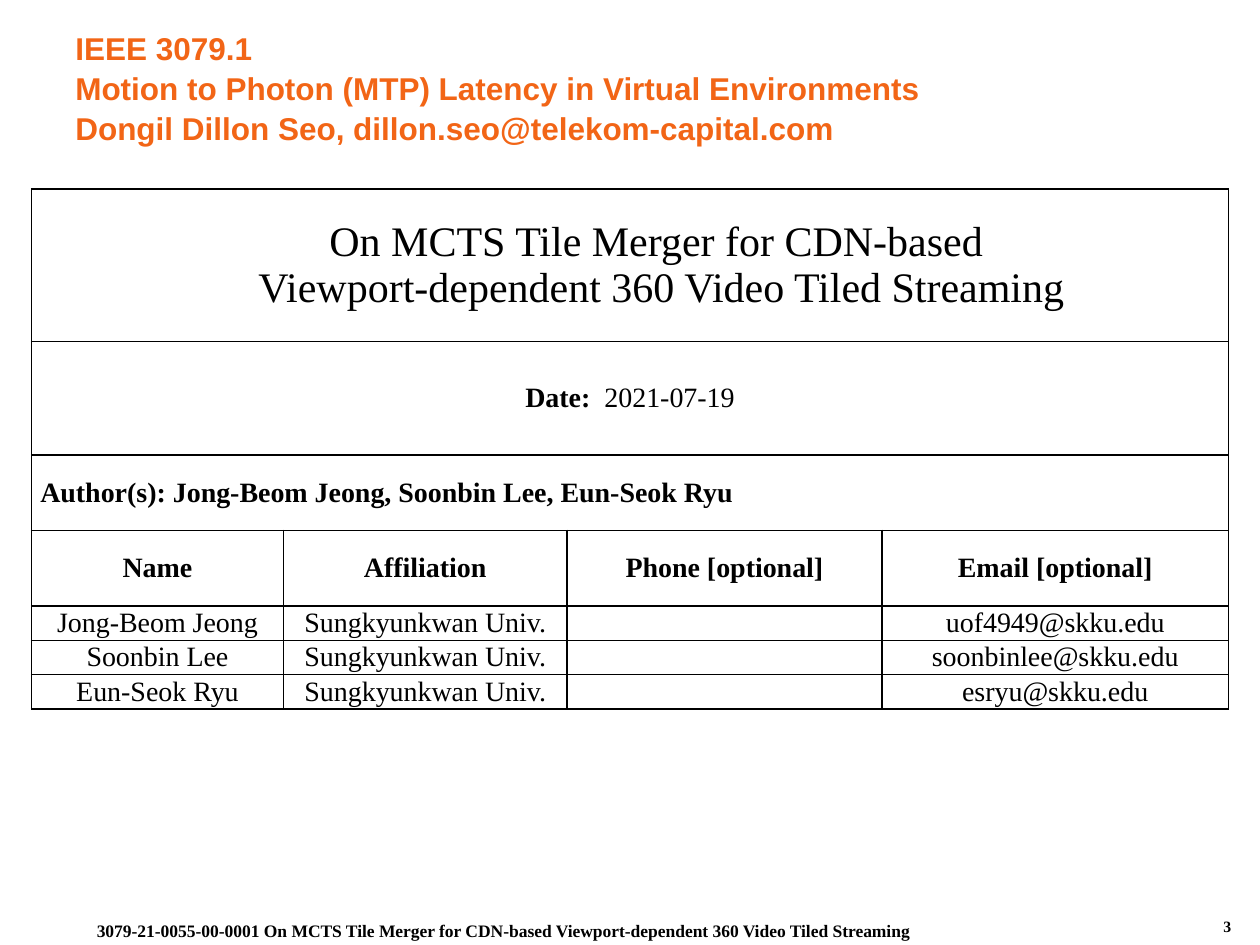
from dataclasses import dataclass

from lxml.etree import SubElement
from pptx import Presentation
from pptx.dml.color import RGBColor
from pptx.enum.text import MSO_ANCHOR, PP_ALIGN
from pptx.oxml import parse_xml
from pptx.oxml.ns import nsdecls, qn
from pptx.util import Inches, Pt


@dataclass(frozen=True)
class Theme:
    heading_font: str = "Arial"
    body_font: str = "Times New Roman"
    accent: str = "F26516"
    ink: str = "000000"
    heading: int = 18
    paper: int = 24
    body: int = 16
    footer: int = 10
    number: int = 9


class Deck:
    def __init__(self, theme):
        self.theme = theme
        self.prs = Presentation()
        self.prs.slide_width, self.prs.slide_height = Inches(10), Inches(7.5)
        self.s = self.prs.slides.add_slide(self.prs.slide_layouts[6])

    def add_text(self, p, text, size, bold=False, color=None, font=None):
        """Add text to a paragraph, turning each newline into a line break."""
        for i, line in enumerate(text.split("\n")):
            if i:
                p.add_line_break()
            r = p.add_run()
            r.text = line
            r.font.size, r.font.bold = Pt(size), bold
            r.font.name = font or self.theme.body_font
            r.font.color.rgb = RGBColor.from_string(color or self.theme.ink)

    def text_box(self, box, text, size, align=PP_ALIGN.LEFT, spacing=None, **style):
        tf = self.s.shapes.add_textbox(*map(Inches, box)).text_frame
        tf.word_wrap = True
        p = tf.paragraphs[0]
        p.alignment, p.line_spacing = align, spacing
        self.add_text(p, text, size, bold=True, **style)

    def table(self, left, top, widths, heights):
        frame = self.s.shapes.add_table(
            len(heights), len(widths), Inches(left), Inches(top),
            Inches(sum(widths)), Inches(sum(heights)))
        table = frame.table
        table.first_row = table.horz_banding = False
        for column, width in zip(table.columns, widths):
            column.width = Inches(width)
        for row, height in zip(table.rows, heights):
            row.height = Inches(height)
        for cell in table.iter_cells():
            self.frame_cell(cell)
        return table

    def frame_cell(self, cell):
        cell.fill.background()
        cell.vertical_anchor = MSO_ANCHOR.MIDDLE
        cell.margin_left = cell.margin_right = Inches(0.07)
        cell.margin_top = cell.margin_bottom = 0
        tcPr = cell._tc.get_or_add_tcPr()
        for i, side in enumerate(("lnL", "lnR", "lnT", "lnB")):
            tcPr.insert(i, parse_xml(
                f'<a:{side} {nsdecls("a")} w="{Pt(1)}"><a:solidFill>'
                f'<a:srgbClr val="{self.theme.ink}"/></a:solidFill></a:{side}>'))

    def cell(self, cell, *parts, size, align=PP_ALIGN.CENTER, after=0, indent=0):
        """Fill a cell with (text, bold) parts; an empty cell keeps its text size."""
        p = cell.text_frame.paragraphs[0]
        p.alignment, p.space_after = align, Pt(after)
        if indent:
            p._p.get_or_add_pPr().set("marL", str(Inches(indent)))
        for text, bold in parts:
            if text:
                self.add_text(p, text, size, bold)
            else:
                SubElement(p._p, qn("a:endParaRPr"), sz=str(size * 100))


def main():
    theme = Theme()
    deck = Deck(theme)

    table = deck.table(0.25, 1.5, [2, 2.25, 2.5, 2.75],
                       [1.21, 0.9, 0.6, 0.6] + [0.13] * 3)
    for row in range(3):
        table.cell(row, 0).merge(table.cell(row, 3))
    deck.cell(table.cell(0, 0),
              ("On MCTS Tile Merger for CDN-based \n"
               "Viewport-dependent 360 Video Tiled Streaming", False),
              size=theme.paper, after=12, indent=0.5)
    deck.cell(table.cell(1, 0), ("Date:", True), ("  2021-07-19", False),
              size=theme.body, after=12)
    deck.cell(table.cell(2, 0),
              ("Author(s): Jong-Beom Jeong, Soonbin Lee, Eun-Seok Ryu", True),
              size=theme.body, align=PP_ALIGN.LEFT)

    school = "Sungkyunkwan Univ."
    people = [
        ("Name", "Affiliation", "Phone [optional]", "Email [optional]"),
        ("Jong-Beom Jeong", school, "", "uof4949@skku.edu"),
        ("Soonbin Lee", school, "", "soonbinlee@skku.edu"),
        ("Eun-Seok Ryu", school, "", "esryu@skku.edu"),
    ]
    for i, person in enumerate(people):
        for j, value in enumerate(person):
            deck.cell(table.cell(3 + i, j), (value, i == 0), size=theme.body)

    deck.text_box((8.25, 7.23, 1.62, 0.27), "3", theme.number, align=PP_ALIGN.RIGHT)
    deck.text_box((0.5, 0.17, 9, 1),
                  "IEEE 3079.1\n"
                  "Motion to Photon (MTP) Latency in Virtual Environments\n"
                  "Dongil Dillon Seo, dillon.seo@telekom-capital.com",
                  theme.heading, spacing=1.05,
                  color=theme.accent, font=theme.heading_font)
    deck.text_box((0.67, 7.25, 7.96, 0.25),
                  "3079-21-0055-00-0001 On MCTS Tile Merger for CDN-based "
                  "Viewport-dependent 360 Video Tiled Streaming", theme.footer)
    deck.prs.save("out.pptx")


if __name__ == "__main__":
    main()
